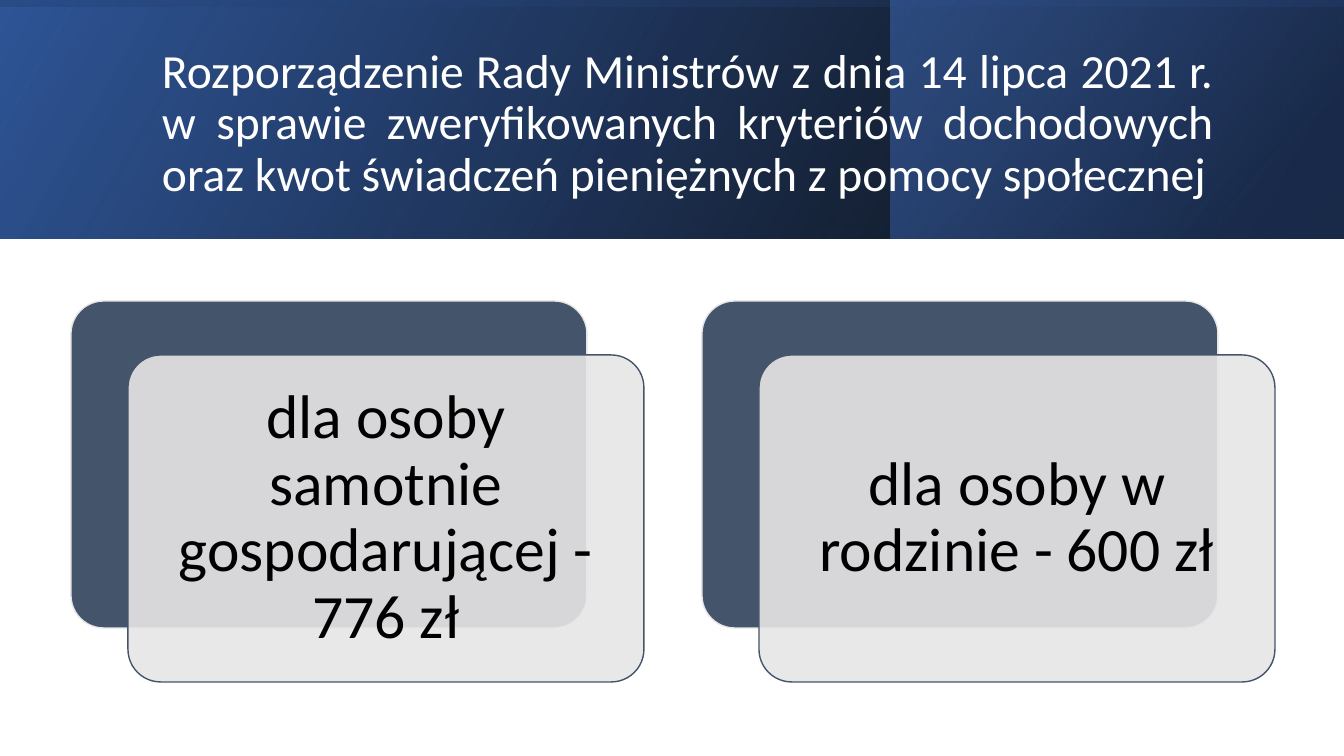
from lxml import etree
from pptx import Presentation
from pptx.dml.color import RGBColor
from pptx.enum.shapes import MSO_SHAPE as SHAPE
from pptx.enum.text import MSO_ANCHOR as ANCHOR, PP_ALIGN as ALIGN
from pptx.oxml import parse_xml
from pptx.oxml.ns import nsdecls, qn
from pptx.util import Pt

PX = 914400 / 100.8
W, H = 1344, 756
BAND_H = 239
NAVY, SILVER = "44546A", "E7E6E6"

prs = Presentation()
prs.slide_width, prs.slide_height = round(W * PX), round(H * PX)
slide = prs.slides.add_slide(prs.slide_layouts[6])


def add_box(kind, *box):
    sp = slide.shapes.add_shape(kind, *[round(v * PX) for v in box])
    sp.shadow.inherit = False
    return sp


def write(sp, text, size, color, align, inset_x, inset_y):
    tf = sp.text_frame
    tf.word_wrap = True
    tf.vertical_anchor = ANCHOR.MIDDLE
    tf.margin_left = tf.margin_right = round(inset_x * PX)
    tf.margin_top = tf.margin_bottom = round(inset_y * PX)
    p = tf.paragraphs[0]
    p.alignment, p.line_spacing = align, 0.9
    r = p.add_run()
    r.text = text
    r.font.name, r.font.size = "Calibri", Pt(size)
    r.font.color.rgb = RGBColor.from_string(color)


# Header band: three layered gradients, stops as (position %, colour, opacity %)
bands = [
    ((0, 0, W, BAND_H), 0, 330, [(0, "000000", 96), (100, "2F5597", 100)]),
    ((891, 0, 452, BAND_H), 0, 320, [(19, "203864", 68), (100, "4472C4", 48)]),
    (((W - BAND_H) / 2, (BAND_H - W) / 2, BAND_H, W), 270, 350,
     [(23, "2F5597", 16), (99, "000000", 45)]),
]
for box, rotation, angle, stops in bands:
    sp = add_box(SHAPE.RECTANGLE, *box)
    sp.rotation = rotation
    sp.line.fill.background()
    spPr = sp._element.spPr
    spPr.find(qn("a:xfrm")).set("flipH", "1")
    gs = "".join(
        f'<a:gs pos="{pos * 1000}"><a:srgbClr val="{color}">'
        f'<a:alpha val="{alpha * 1000}"/></a:srgbClr></a:gs>'
        for pos, color, alpha in stops)
    spPr.find(qn("a:prstGeom")).addnext(parse_xml(
        f'<a:gradFill {nsdecls("a")} rotWithShape="1"><a:gsLst>{gs}</a:gsLst>'
        f'<a:lin ang="{angle * 60000}" scaled="0"/></a:gradFill>'))

title = slide.shapes.add_textbox(*[round(v * PX) for v in (152, 38, 1072, 173)])
write(title, "Rozporządzenie Rady Ministrów z dnia 14 lipca 2021 r. w sprawie "
      "zweryfikowanych kryteriów dochodowych oraz kwot świadczeń pieniężnych "
      "z pomocy społecznej", 34, "FFFFFF", ALIGN.JUSTIFY, 10, 5)

# Criteria: a dark card with a translucent one offset in front of it
CARD_W, CARD_H = 516, 327
criteria = ["dla osoby samotnie gospodarującej - 776 zł",
            "dla osoby w rodzinie - 600 zł"]
for i, text in enumerate(criteria):
    x, y = 71 + i * 631, 301
    for dx, dy, fill, line in [(0, 0, NAVY, SILVER), (57, 54, SILVER, NAVY)]:
        card = add_box(SHAPE.ROUNDED_RECTANGLE, x + dx, y + dy, CARD_W, CARD_H)
        card.adjustments[0] = 0.1
        card.fill.solid()
        card.fill.fore_color.rgb = RGBColor.from_string(fill)
        card.line.color.rgb = RGBColor.from_string(line)
        card.line.width = Pt(1)
    clr = card._element.spPr.find(qn("a:solidFill")).find(qn("a:srgbClr"))
    etree.SubElement(clr, qn("a:alpha")).set("val", "90000")
    write(card, text, 44, "000000", ALIGN.CENTER, 18, 18)

prs.save("out.pptx")
